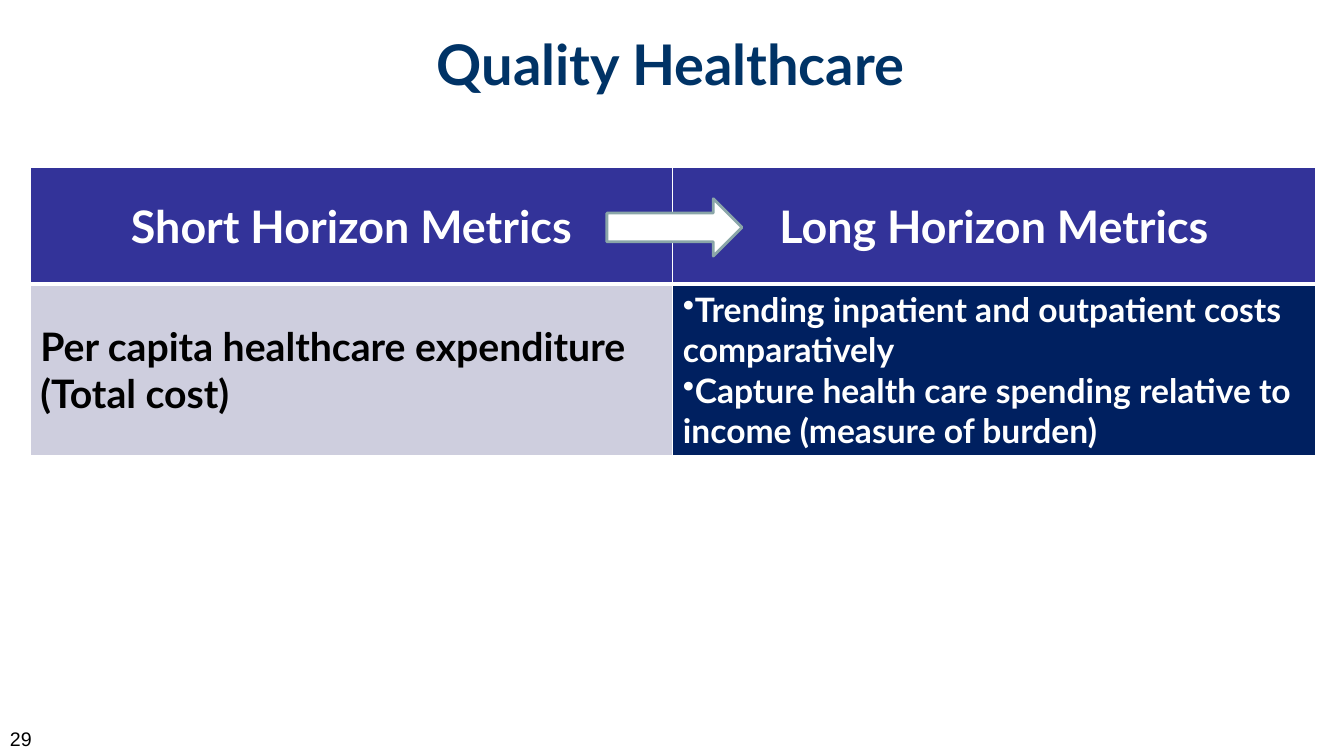
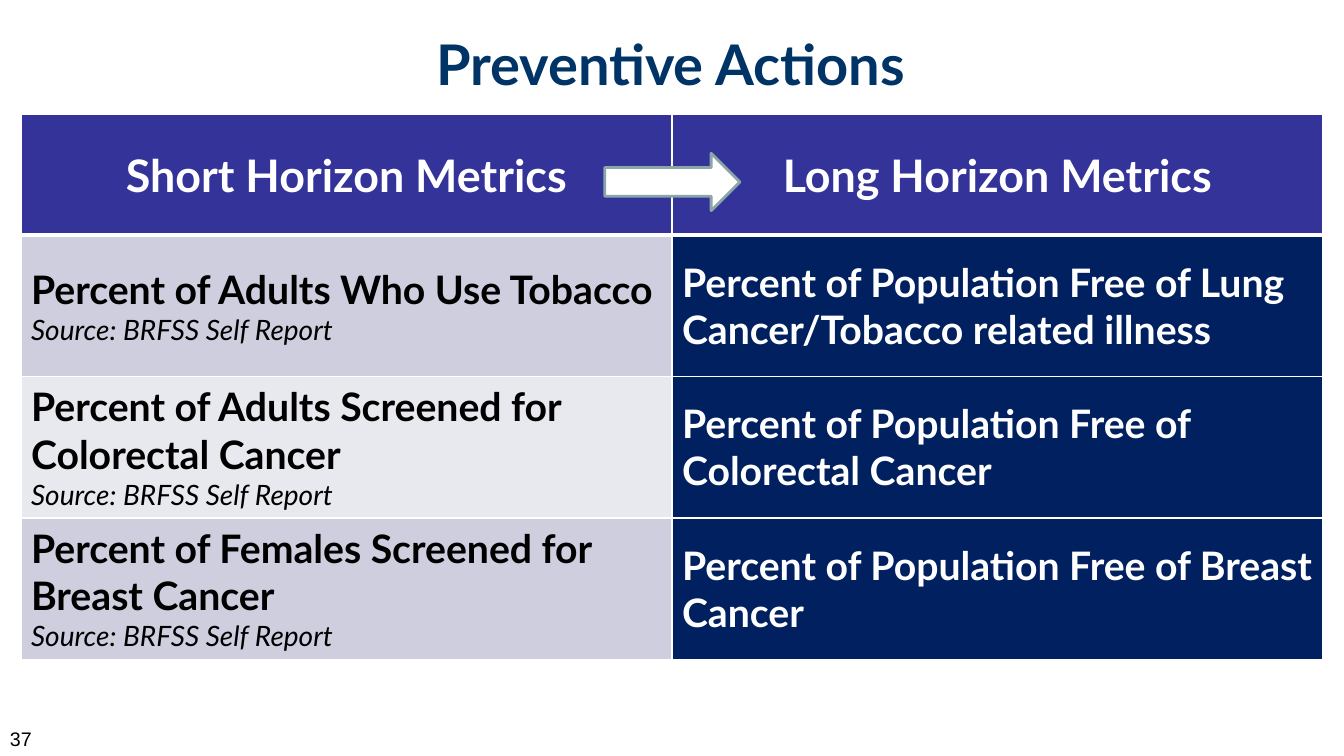
from dataclasses import dataclass

import pptx
import pptx.dml.color
import pptx.enum.shapes
import pptx.enum.text
import pptx.oxml
import pptx.oxml.ns
import pptx.util

Pt = pptx.util.Pt
ALIGN = pptx.enum.text.PP_ALIGN
MIDDLE = pptx.enum.text.MSO_ANCHOR.MIDDLE

COLORS = {
    "title": "003366",
    "header": "333399",
    "band_dark": "CECEDE",
    "band_light": "E8E8EF",
    "long_term": "002060",
    "arrow_line": "8AA6A8",
    "white": "FFFFFF",
    "black": "000000",
}
HEADERS = ("Short Horizon Metrics", "Long Horizon Metrics")
SOURCE = "Source: BRFSS Self Report"
TITLE_ONLY = 5
ARROW_SIZE = (96.5, 41)
HEADER_RULE, GRID_RULE = 3, 1


@dataclass(frozen=True)
class Line:
    text: str
    size: float = 28
    bold: bool = True
    italic: bool = False
    bullet: bool = False


@dataclass(frozen=True)
class MetricRow:
    short_term: tuple[Line, ...]
    long_term: tuple[Line, ...]


@dataclass(frozen=True)
class MetricSlide:
    title: str
    number: str
    table_position: tuple[float, float]
    column_width: float
    header_height: float
    row_height: float
    arrow_position: tuple[float, float]
    rows: tuple[MetricRow, ...]


def sourced_row(short_term: str, long_term: str) -> MetricRow:
    source = Line(SOURCE, size=20, bold=False, italic=True)
    return MetricRow((Line(short_term), source), (Line(long_term),))


SLIDES = (
    MetricSlide(
        title="Quality Healthcare",
        number="29",
        table_position=(21.6, 119.5),
        column_width=459,
        header_height=83.5,
        row_height=122,
        arrow_position=(433.5, 142),
        rows=(
            MetricRow(
                (Line("Per capita healthcare expenditure (Total cost)"),),
                (
                    Line("Trending inpatient and outpatient costs comparatively",
                         size=24, bullet=True),
                    Line("Capture health care spending relative to income "
                         "(measure of burden)", size=24, bullet=True),
                ),
            ),
        ),
    ),
    MetricSlide(
        title="Preventive Actions",
        number="37",
        table_position=(15, 82),
        column_width=465,
        header_height=86,
        row_height=101,
        arrow_position=(432, 109.5),
        rows=(
            sourced_row("Percent of Adults Who Use Tobacco",
                        "Percent of Population Free of Lung Cancer/Tobacco related illness"),
            sourced_row("Percent of Adults Screened for Colorectal Cancer",
                        "Percent of Population Free of Colorectal Cancer"),
            sourced_row("Percent of Females Screened for Breast Cancer",
                        "Percent of Population Free of Breast Cancer"),
        ),
    ),
)


def rgb(name: str) -> pptx.dml.color.RGBColor:
    return pptx.dml.color.RGBColor.from_string(COLORS[name])


def write(paragraph, text: str, *, size: float, color: str, font: str = "Lato",
          bold: bool = False, italic: bool = False, bullet: bool = False,
          align=ALIGN.LEFT) -> None:
    properties = paragraph._p.get_or_add_pPr()
    if bullet:
        properties.set("marL", "0")
        properties.set("indent", "0")
        marker = pptx.oxml.ns.qn("a:buChar")
        properties.makeelement(marker)
        properties.append(properties.makeelement(marker, {"char": "•"}))
    paragraph.alignment = align
    run = paragraph.add_run()
    run.text = text
    run.font.name = font
    run.font.size = Pt(size)
    run.font.bold = bold
    run.font.italic = italic
    run.font.color.rgb = rgb(color)


def set_borders(cell, top: float, bottom: float) -> None:
    """Draw white rules on all four sides, ahead of the fill as the schema asks."""
    widths = {"lnL": GRID_RULE, "lnR": GRID_RULE, "lnT": top, "lnB": bottom}
    properties = cell._tc.get_or_add_tcPr()
    for index, (tag, width) in enumerate(widths.items()):
        rule = pptx.oxml.parse_xml(
            f'<a:{tag} {pptx.oxml.ns.nsdecls("a")} w="{Pt(width)}"><a:solidFill>'
            f'<a:srgbClr val="{COLORS["white"]}"/></a:solidFill></a:{tag}>')
        properties.insert(index, rule)


def fill_cell(cell, lines: tuple[Line, ...], fill: str, color: str,
              align=ALIGN.LEFT) -> None:
    cell.vertical_anchor = MIDDLE
    cell.fill.solid()
    cell.fill.fore_color.rgb = rgb(fill)
    frame = cell.text_frame
    for index, line in enumerate(lines):
        paragraph = frame.add_paragraph() if index else frame.paragraphs[0]
        write(paragraph, line.text, size=line.size, color=color, bold=line.bold,
              italic=line.italic, bullet=line.bullet, align=align)


def add_title(slide, text: str) -> None:
    title = slide.shapes.title
    title.left, title.top, title.width, title.height = Pt(47), Pt(0), Pt(864), Pt(90)
    frame = title.text_frame
    frame.auto_size = pptx.enum.text.MSO_AUTO_SIZE.NONE
    frame.vertical_anchor = MIDDLE
    write(frame.paragraphs[0], text, size=40, color="title", bold=True,
          align=ALIGN.CENTER)


def add_slide_number(slide, number: str) -> None:
    box = slide.shapes.add_textbox(Pt(0), Pt(516), Pt(224), Pt(18))
    box.text_frame.word_wrap = True
    write(box.text_frame.paragraphs[0], number, size=14, color="black", font="Arial")


def add_metric_table(slide, content: MetricSlide) -> None:
    left, top = content.table_position
    heights = [content.header_height] + [content.row_height] * len(content.rows)
    table = slide.shapes.add_table(
        len(heights), len(HEADERS), Pt(left), Pt(top),
        Pt(content.column_width * len(HEADERS)), Pt(sum(heights))).table
    table.horz_banding = False
    for column in table.columns:
        column.width = Pt(content.column_width)
    for row, height in zip(table.rows, heights):
        row.height = Pt(height)

    for column, header in enumerate(HEADERS):
        fill_cell(table.cell(0, column), (Line(header, size=32),), "header", "white",
                  ALIGN.CENTER)
    for index, metric in enumerate(content.rows, start=1):
        band = "band_dark" if index % 2 else "band_light"
        fill_cell(table.cell(index, 0), metric.short_term, band, "black")
        fill_cell(table.cell(index, 1), metric.long_term, "long_term", "white")

    for index, row in enumerate(table.rows):
        for cell in row.cells:
            set_borders(cell, top=HEADER_RULE if index == 1 else GRID_RULE,
                        bottom=HEADER_RULE if index == 0 else GRID_RULE)


def add_arrow(slide, position: tuple[float, float]) -> None:
    arrow = slide.shapes.add_shape(
        pptx.enum.shapes.MSO_SHAPE.RIGHT_ARROW,
        *(Pt(length) for length in position + ARROW_SIZE))
    arrow.shadow.inherit = False
    arrow.fill.solid()
    arrow.fill.fore_color.rgb = rgb("white")
    arrow.line.color.rgb = rgb("arrow_line")
    arrow.line.width = Pt(2)


def add_metric_slide(presentation, content: MetricSlide) -> None:
    slide = presentation.slides.add_slide(presentation.slide_layouts[TITLE_ONLY])
    add_title(slide, content.title)
    add_slide_number(slide, content.number)
    add_metric_table(slide, content)
    add_arrow(slide, content.arrow_position)


def main() -> None:
    presentation = pptx.Presentation()
    presentation.slide_width, presentation.slide_height = Pt(960), Pt(540)
    for content in SLIDES:
        add_metric_slide(presentation, content)
    presentation.save("out.pptx")


if __name__ == "__main__":
    main()
